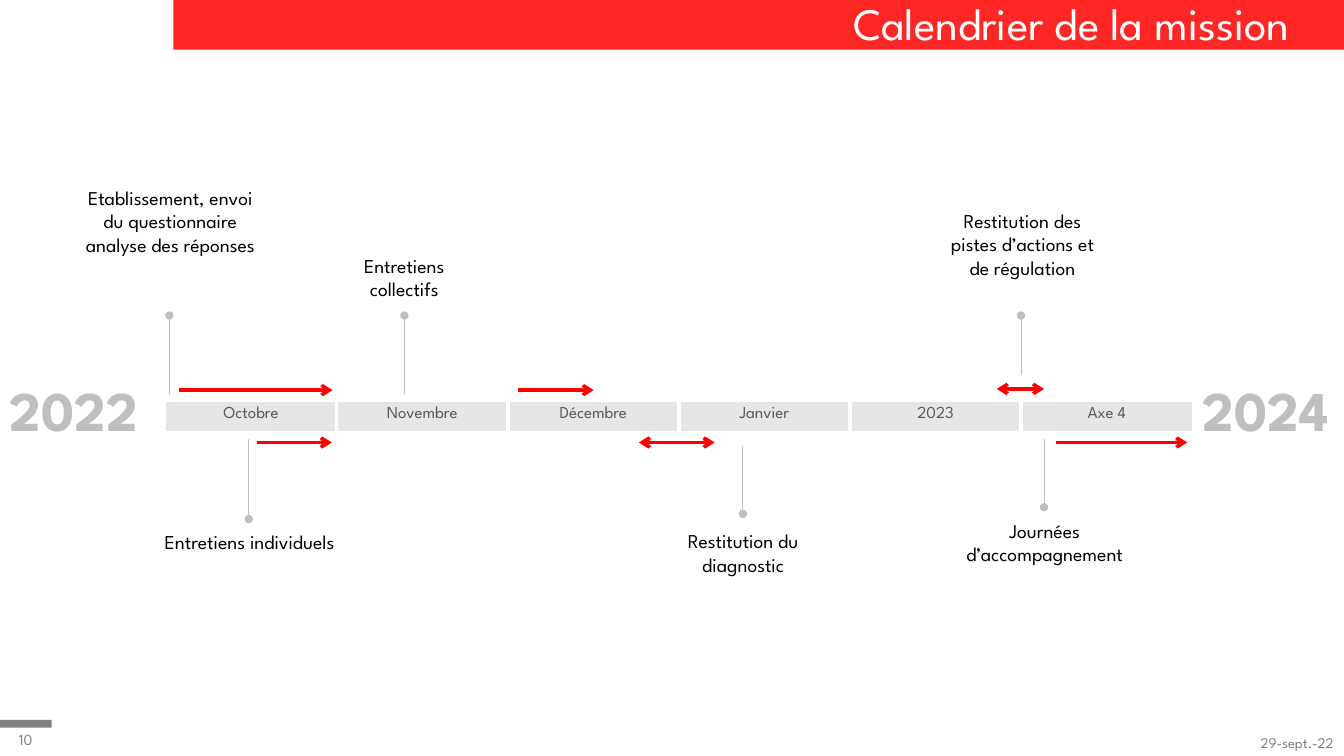
from dataclasses import dataclass

from pptx import Presentation
from pptx.dml.color import RGBColor
from pptx.enum.shapes import MSO_CONNECTOR, MSO_SHAPE
from pptx.enum.text import MSO_ANCHOR, MSO_AUTO_SIZE, PP_ALIGN
from pptx.oxml.ns import qn
from pptx.oxml.xmlchemy import OxmlElement
from pptx.util import Cm, Pt


@dataclass(frozen=True)
class Theme:
    font: str = "League Spartan"
    red: str = "FF0000"
    white: str = "FFFFFF"
    black: str = "000000"
    gray: str = "808080"
    pale: str = "BFBFBF"
    cell: str = "E7E6E6"
    dark: str = "595959"
    head: float = 32
    year: float = 40
    label: float = 14
    month: float = 12
    page: float = 11
    date: float = 10.5


def node(parent, tag, **attrs):
    item = OxmlElement(tag)
    for key, value in attrs.items():
        item.set(key, value)
    parent.append(item)
    return item


class Board:
    def __init__(self, slide, theme):
        self.slide = slide
        self.shapes = slide.shapes
        self.theme = theme

    def bar(self, box, color, alpha=100):
        bar = self.shapes.add_shape(MSO_SHAPE.RECTANGLE, *map(Cm, box))
        bar.shadow.inherit = False
        bar.fill.solid()
        bar.fill.fore_color.rgb = RGBColor.from_string(color)
        bar.line.fill.background()
        if alpha < 100:
            tint = bar.element.spPr.find(qn("a:solidFill"))[0]
            node(tint, "a:alpha", val=str(alpha * 1000))
        # Bars lie behind the placeholders
        self.shapes.element.insert(2, bar.element)

    def run(self, para, text, size, color, bold=False, align=PP_ALIGN.CENTER):
        para.alignment = align
        run = para.add_run()
        run.text = text
        run.font.name = self.theme.font
        run.font.size = Pt(size)
        run.font.bold = bold
        run.font.color.rgb = RGBColor.from_string(color)

    def text(self, box, text, size, color, align=PP_ALIGN.CENTER, bold=False,
             anchor=MSO_ANCHOR.TOP, inset=0.25, space=1.0, holder=None):
        shape = holder or self.shapes.add_textbox(*map(Cm, box))
        shape.left, shape.top, shape.width, shape.height = map(Cm, box)
        frame = shape.text_frame
        frame.word_wrap = True
        frame.auto_size = MSO_AUTO_SIZE.NONE
        frame.vertical_anchor = anchor
        frame.margin_left = frame.margin_right = Cm(inset)
        para = frame.paragraphs[0]
        if holder:
            props = para._p.get_or_add_pPr()
            props.set("marL", "0")
            props.set("indent", "0")
            node(props, "a:buNone")
        para.line_spacing = space
        para.space_before = Pt(0)
        self.run(para, text, size, color, bold, align)

    def line(self, start, end, color, width, head=None, tail=None):
        line = self.shapes.add_connector(
            MSO_CONNECTOR.STRAIGHT, *map(Cm, start + end))
        line.line.color.rgb = RGBColor.from_string(color)
        line.line.width = Pt(width)
        props = line.element.spPr
        stroke = props.find(qn("a:ln"))
        if head:
            node(stroke, "a:headEnd", type=head)
        if tail:
            node(stroke, "a:tailEnd", type=tail)
        node(props, "a:effectLst")

    def months(self, box, names):
        frame = self.shapes.add_table(1, len(names), *map(Cm, box))
        table = frame.table
        table.first_row = table.horz_banding = False
        last = len(names) - 1
        for col, name in enumerate(names):
            table.columns[col].width = Cm(box[2] / len(names))
            cell = table.cell(0, col)
            props = cell._tc.get_or_add_tcPr()
            edges = {"L": 3 if col else 1, "R": 3 if col < last else 1,
                     "T": 1, "B": 3}
            for side, width in edges.items():
                edge = node(props, f"a:ln{side}", w=str(Pt(width)))
                fill = node(edge, "a:solidFill")
                node(fill, "a:srgbClr", val=self.theme.white)
            cell.fill.solid()
            cell.fill.fore_color.rgb = RGBColor.from_string(self.theme.cell)
            self.run(cell.text_frame.paragraphs[0], name,
                     self.theme.month, self.theme.dark)


def main():
    deck = Presentation()
    deck.slide_width, deck.slide_height = Cm(33.87), Cm(19.05)
    slide = deck.slides.add_slide(deck.slide_layouts[1])
    theme = Theme()
    board = Board(slide, theme)

    # Title band and footer
    board.bar((4.37, 0, 29.5, 1.25), theme.red, 85)
    board.bar((0, 18.14, 1.3, 0.2), theme.gray)
    board.text((4.67, 0, 28.09, 1.4), "Calendrier de la mission", theme.head,
               theme.white, PP_ALIGN.RIGHT, anchor=MSO_ANCHOR.BOTTOM,
               space=0.9, holder=slide.shapes.title)
    board.text((26.24, 18.03, 7.62, 1.02), "29-sept.-22", theme.date,
               theme.gray, PP_ALIGN.RIGHT, anchor=MSO_ANCHOR.BOTTOM)
    board.text((0, 18.24, 1.3, 0.76), "10", theme.page, theme.gray,
               anchor=MSO_ANCHOR.BOTTOM)

    # Years at both ends
    for left, wide, year, holder in (
            (0, 3.84, "2022", slide.placeholders[1]),
            (30.05, 4.52, "2024", None)):
        board.text((left, 9.53, wide, 1.14), year, theme.year, theme.pale,
                   PP_ALIGN.LEFT, True, space=0.9, holder=holder)

    # Month strip
    board.months((4.17, 10.11, 25.88, 0.79),
                 ("Octobre", "Novembre", "Décembre", "Janvier", "2023", "Axe 4"))

    # Step labels: box, side inset, text
    for box, inset, text in (
            ((2.01, 4.55, 4.57, 3.25), 0,
             "Etablissement, envoi du questionnaire analyse des réponses"),
            ((4.01, 13.23, 4.57, 1.45), 0, "Entretiens individuels"),
            ((8.36, 6.27, 3.66, 1.45), 0, "Entretiens collectifs"),
            ((23.65, 5.13, 4.24, 2.64), 0.25,
             "Restitution des pistes d’actions et de régulation"),
            ((16.61, 13.21, 4.24, 1.45), 0.25, "Restitution du diagnostic"),
            ((23.37, 12.95, 5.92, 1.45), 0.25, "Journées d’accompagnement")):
        board.text(box, text, theme.label, theme.black, inset=inset)

    # Pins: x, dot y, strip y
    for x, dot, end in ((4.27, 7.95, 9.93), (6.27, 13.08, 11.07),
                        (10.19, 7.95, 9.93), (18.72, 12.95, 11.25),
                        (25.73, 7.95, 9.45), (26.31, 12.78, 11.07)):
        board.line((x, dot), (x, end), theme.pale, 0.5, head="oval")

    # Spans: y, start x, end x, head at the start
    for y, start, end, head in (
            (9.83, 4.5, 8.38, None), (11.15, 6.48, 8.36, None),
            (9.83, 13.06, 14.96, None), (11.15, 16.1, 18.01, "arrow"),
            (9.8, 25.12, 26.31, "arrow"), (11.15, 26.62, 29.92, None)):
        board.line((start, y), (end, y), theme.red, 2.5, head, "arrow")

    deck.save("out.pptx")


if __name__ == "__main__":
    main()
